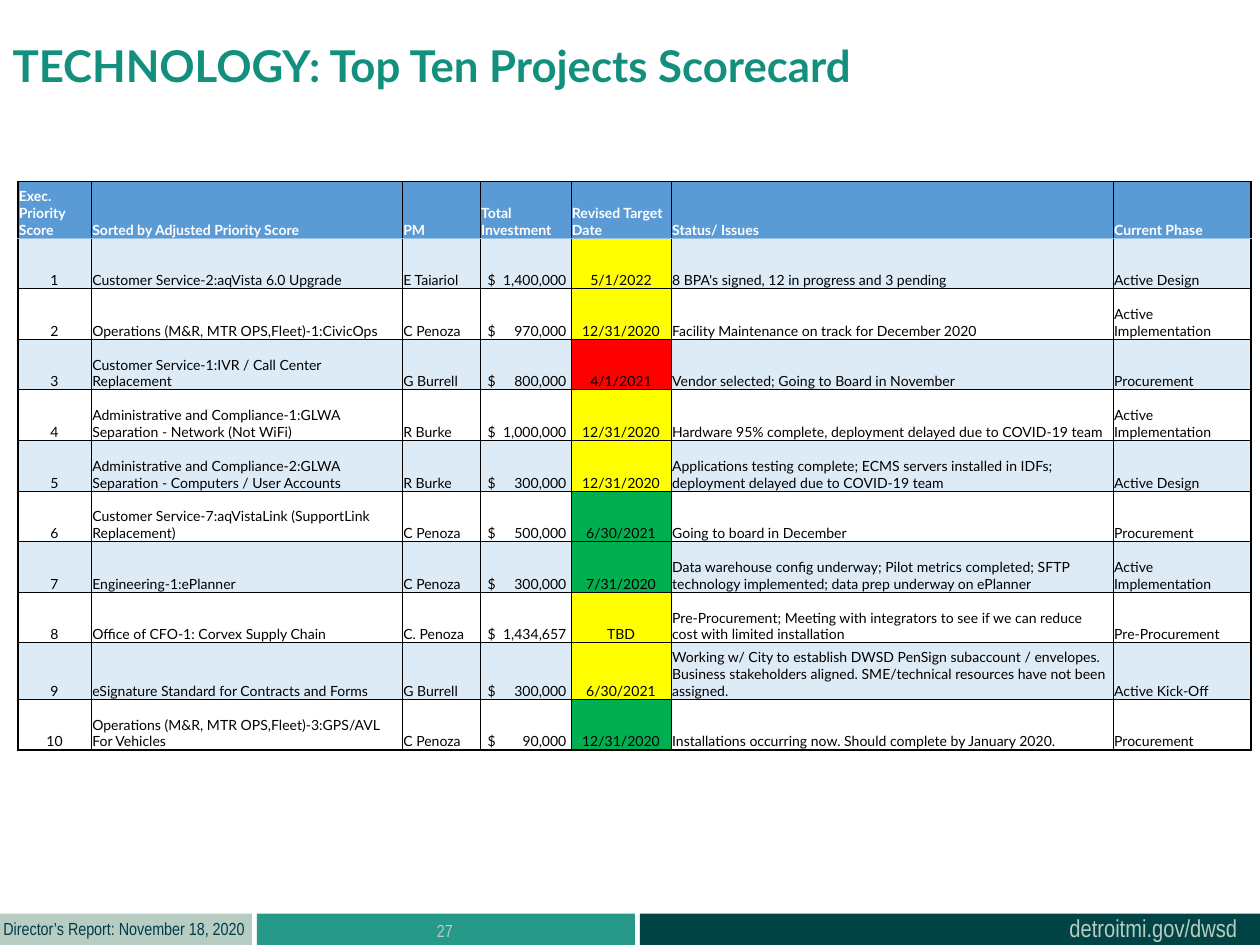
from lxml import etree
from pptx import Presentation
from pptx import util as u
from pptx.dml.color import RGBColor
from pptx.enum import shapes, text
from pptx.oxml import ns

COLORS = {
    "title": "138F7E", "teal": "279989", "deep": "004445", "sage": "B7CDC2", "navy": "003B49",
    "header": "5B9BD5", "band": "DDEBF7", "rule": "9BC2E6", "black": "000000", "white": "FFFFFF",
    "yellow": "FFFF00", "red": "FF0000", "green": "00B050",
}
LEFT, CENTER = text.PP_ALIGN.LEFT, text.PP_ALIGN.CENTER


def write(frame, words, color, align=LEFT, **font_format):
    paragraph = frame.paragraphs[0]
    paragraph.alignment = align
    run = paragraph.add_run()
    run.text = words
    run.font.color.rgb = RGBColor.from_string(COLORS[color])
    for name, value in font_format.items():
        setattr(run.font, name, value)
    return paragraph


def draw_border(cell, position, side, color, points):
    line = etree.Element(ns.qn(f"a:ln{side}"), w=str(u.Pt(points)))
    fill = etree.SubElement(line, ns.qn("a:solidFill"))
    etree.SubElement(fill, ns.qn("a:srgbClr"), val=COLORS[color])
    cell._tc.get_or_add_tcPr().insert(position, line)


deck = Presentation()
deck.slide_width, deck.slide_height = u.Cm(25.4), u.Cm(19.05)
slide = deck.slides.add_slide(deck.slide_layouts[5])

for left, width, color in [(5.18, 7.62, "teal"), (12.9, 12.7, "deep"), (0, 5.08, "sage")]:
    band = slide.shapes.add_shape(
        shapes.MSO_SHAPE.RECTANGLE, u.Cm(left), u.Cm(18.42), u.Cm(width), u.Cm(0.63))
    band.shadow.inherit = False
    band.fill.solid()
    band.fill.fore_color.rgb = RGBColor.from_string(COLORS[color])
    band.line.fill.background()

FOOTERS = [
    ("detroitmi.gov/dwsd", (21.31, 18.29, 3.94, 0.86), 14, "sage", LEFT, False),
    ("Director’s Report: November 18, 2020", (-0.18, 18.39, 5.41, 0.69), 10, "navy", LEFT, False),
    ("27", (5.16, 18.42, 7.62, 1.02), 10, "sage", CENTER, True),
]
for words, place, size, color, align, wraps in FOOTERS:
    footer = slide.shapes.add_textbox(*map(u.Cm, place)).text_frame
    footer.word_wrap = wraps
    footer.auto_size = text.MSO_AUTO_SIZE.NONE if wraps else text.MSO_AUTO_SIZE.SHAPE_TO_FIT_TEXT
    write(footer, words, color, align, name="Arial Narrow", size=u.Pt(size))

title = slide.shapes.title
title_place = {"left": 0, "top": 0.66, "width": 19.28, "height": 1.96}
for name, value in title_place.items():
    setattr(title, name, u.Cm(value))
title_format = {"word_wrap": True, "auto_size": text.MSO_AUTO_SIZE.NONE,
                "vertical_anchor": text.MSO_ANCHOR.TOP}
for name, value in title_format.items():
    setattr(title.text_frame, name, value)
write(title.text_frame, "TECHNOLOGY: Top Ten Projects Scorecard", "title",
      name="Lato", size=u.Pt(25), bold=True)

HEADINGS = ["Exec. Priority Score", "Sorted by Adjusted Priority Score", "PM", "Total Investment",
            "Revised Target Date", "Status/ Issues", "Current Phase"]
PROJECTS = [
    ("Customer Service-2:aqVista 6.0 Upgrade", "E Taiariol", "1,400,000", "5/1/2022", "yellow",
     "8 BPA's signed, 12 in progress and 3 pending", "Active Design"),
    ("Operations (M&R, MTR OPS,Fleet)-1:CivicOps", "C Penoza", "970,000", "12/31/2020", "yellow",
     "Facility Maintenance on track for December 2020", "Active Implementation"),
    ("Customer Service-1:IVR / Call Center Replacement", "G Burrell", "800,000", "4/1/2021", "red",
     "Vendor selected; Going to Board in November", "Procurement"),
    ("Administrative and Compliance-1:GLWA Separation - Network (Not WiFi)", "R Burke",
     "1,000,000", "12/31/2020", "yellow",
     "Hardware 95% complete, deployment delayed due to COVID-19 team", "Active Implementation"),
    ("Administrative and Compliance-2:GLWA Separation - Computers / User Accounts", "R Burke",
     "300,000", "12/31/2020", "yellow",
     "Applications testing complete; ECMS servers installed in IDFs; "
     "deployment delayed due to COVID-19 team", "Active Design"),
    ("Customer Service-7:aqVistaLink (SupportLink Replacement)", "C Penoza", "500,000",
     "6/30/2021", "green", "Going to board in December", "Procurement"),
    ("Engineering-1:ePlanner", "C Penoza", "300,000", "7/31/2020", "green",
     "Data warehouse config underway; Pilot metrics completed; SFTP technology implemented; "
     "data prep underway on ePlanner", "Active Implementation"),
    ("Office of CFO-1: Corvex Supply Chain", "C. Penoza", "1,434,657", "TBD", "yellow",
     "Pre-Procurement; Meeting with integrators to see if we can reduce cost "
     "with limited installation", "Pre-Procurement"),
    ("eSignature Standard for Contracts and Forms", "G Burrell", "300,000", "6/30/2021", "yellow",
     "Working w/ City to establish DWSD PenSign subaccount / envelopes. "
     "Business stakeholders aligned. SME/technical resources have not been assigned.",
     "Active Kick-Off"),
    ("Operations (M&R, MTR OPS,Fleet)-3:GPS/AVL For Vehicles", "C Penoza", "90,000",
     "12/31/2020", "green", "Installations occurring now. Should complete by January 2020.",
     "Procurement"),
]
WIDTHS = [1.48, 6.27, 1.57, 1.83, 2.02, 8.91, 2.78]
HEIGHTS = [1.14] + [1.02] * 8 + [1.14, 1.02]
SCORE, INVESTMENT, TARGET = 0, 3, 4

scorecard = slide.shapes.add_table(
    len(HEIGHTS), len(WIDTHS), u.Cm(0.36), u.Cm(3.66),
    u.Cm(sum(WIDTHS)), u.Cm(sum(HEIGHTS))).table
scorecard.horz_banding = False
for column, width in zip(scorecard.columns, WIDTHS):
    column.width = u.Cm(width)
for row, height in zip(scorecard.rows, HEIGHTS):
    row.height = u.Cm(height)

entries = [HEADINGS]
for score, (project, manager, cost, date, status, issues, phase) in enumerate(PROJECTS, 1):
    entries.append([str(score), project, manager, f"$\t{cost}", date, issues, phase])

cell_format = {"vertical_anchor": text.MSO_ANCHOR.BOTTOM, "margin_left": u.Cm(0.02),
               "margin_right": u.Cm(0.02), "margin_top": u.Cm(0.02), "margin_bottom": 0}
last_row, last_column = len(HEIGHTS) - 1, len(WIDTHS) - 1
for r, entry in enumerate(entries):
    is_header = r == 0
    for c, words in enumerate(entry):
        cell = scorecard.cell(r, c)
        for name, value in cell_format.items():
            setattr(cell, name, value)
        centered = not is_header and c in (SCORE, TARGET)
        paragraph = write(cell.text_frame, words, "white" if is_header else "black",
                          CENTER if centered else LEFT,
                          name="Lato", size=u.Pt(8), bold=is_header)
        if c == INVESTMENT and not is_header:
            cell.margin_left = u.Cm(0.15)
            tabs = etree.SubElement(paragraph._p.get_or_add_pPr(), ns.qn("a:tabLst"))
            etree.SubElement(tabs, ns.qn("a:tab"), pos=str(u.Cm(1.59)), algn="r")

        fill = "header" if is_header else "band" if r % 2 else None
        if c == TARGET and not is_header:
            fill = PROJECTS[r - 1][4]
        if fill:
            cell.fill.solid()
            cell.fill.fore_color.rgb = RGBColor.from_string(COLORS[fill])
        else:
            cell.fill.background()

        borders = [
            ("L", "black", 1 if c == 0 else 0.5),
            ("R", "black", 1 if c == last_column else 0.5),
            ("T", "rule" if r == 1 else "black", 1 if is_header else 0.5),
            ("B", "rule" if is_header else "black", 1 if r == last_row else 0.5),
        ]
        for position, border in enumerate(borders):
            draw_border(cell, position, *border)

deck.save("out.pptx")
